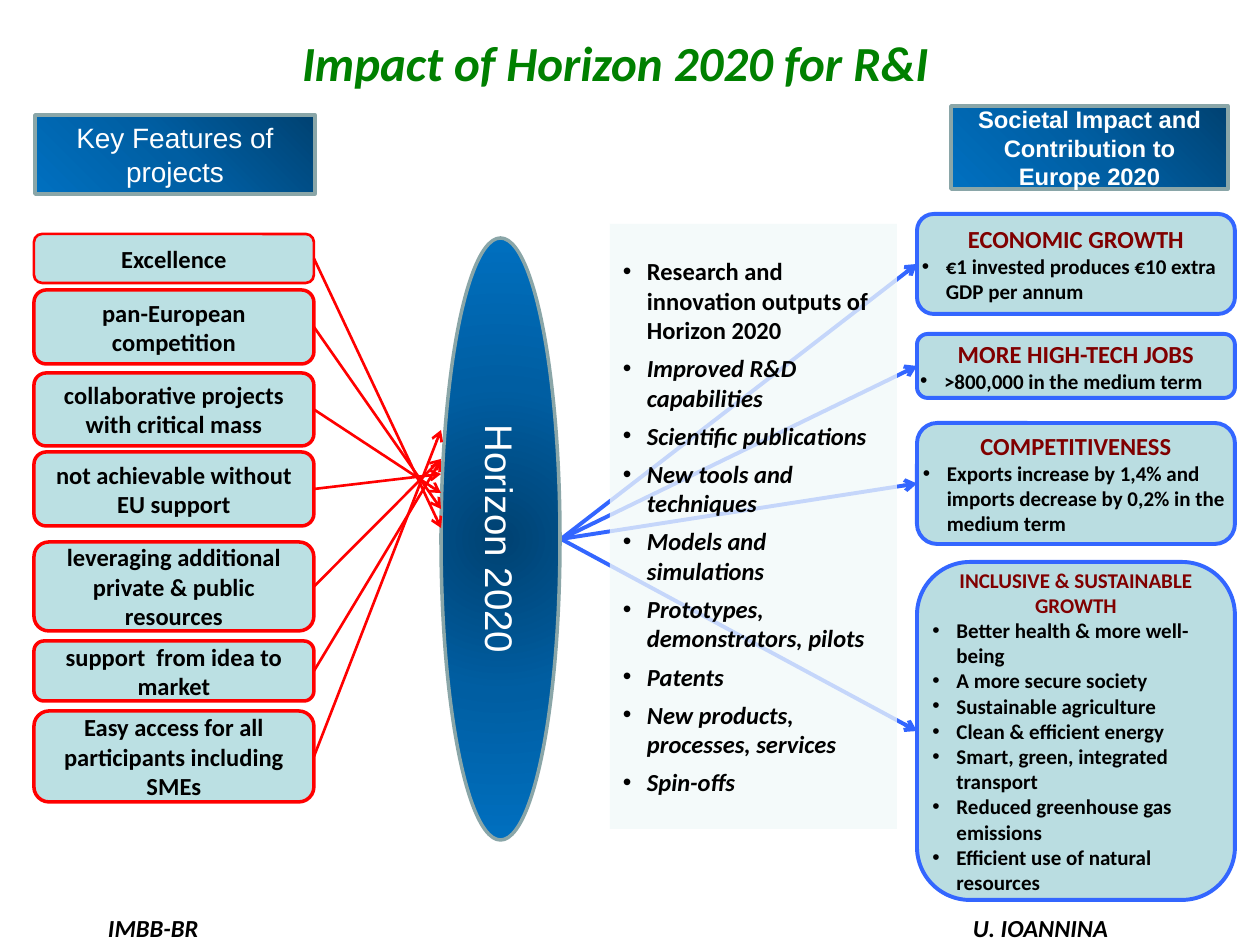
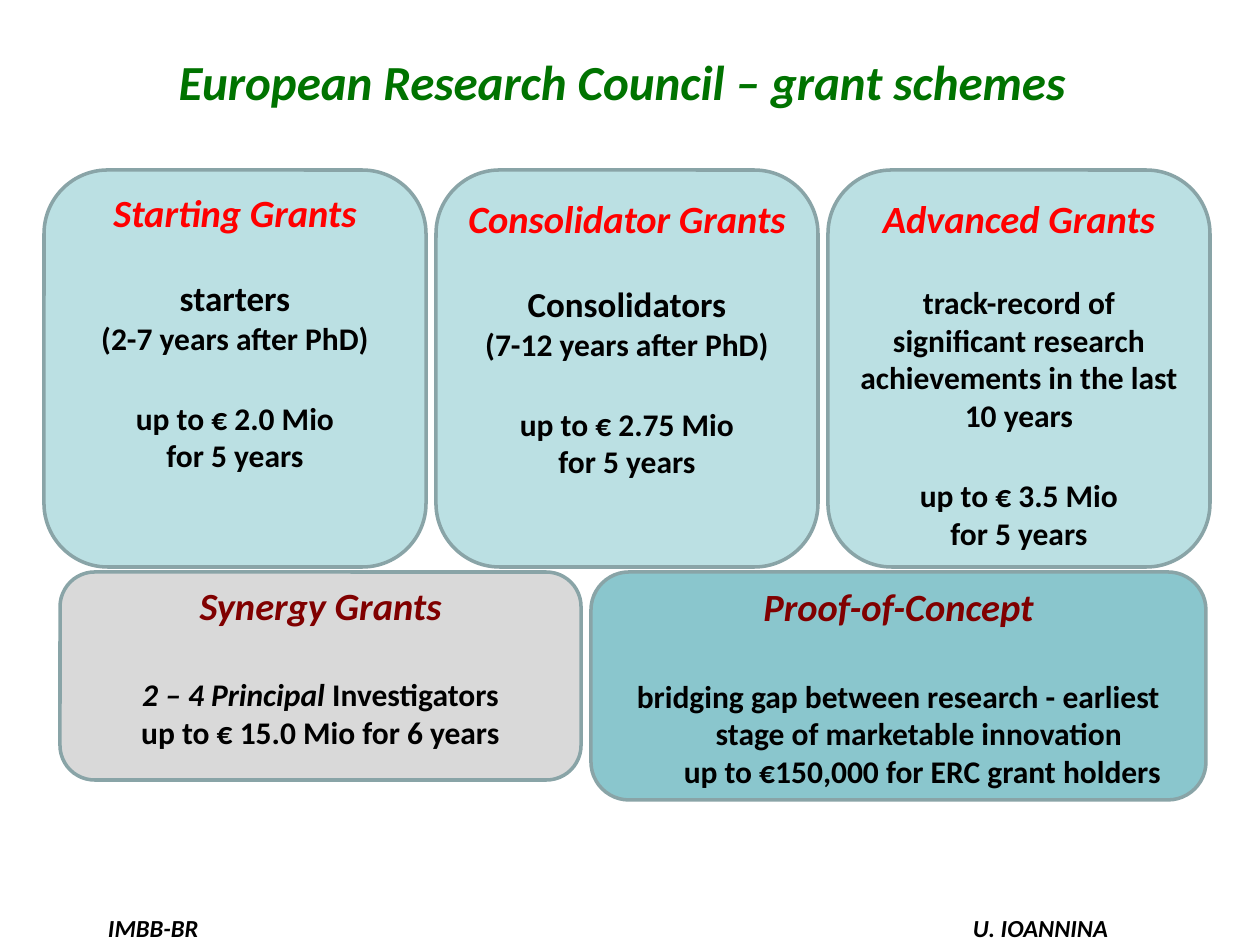
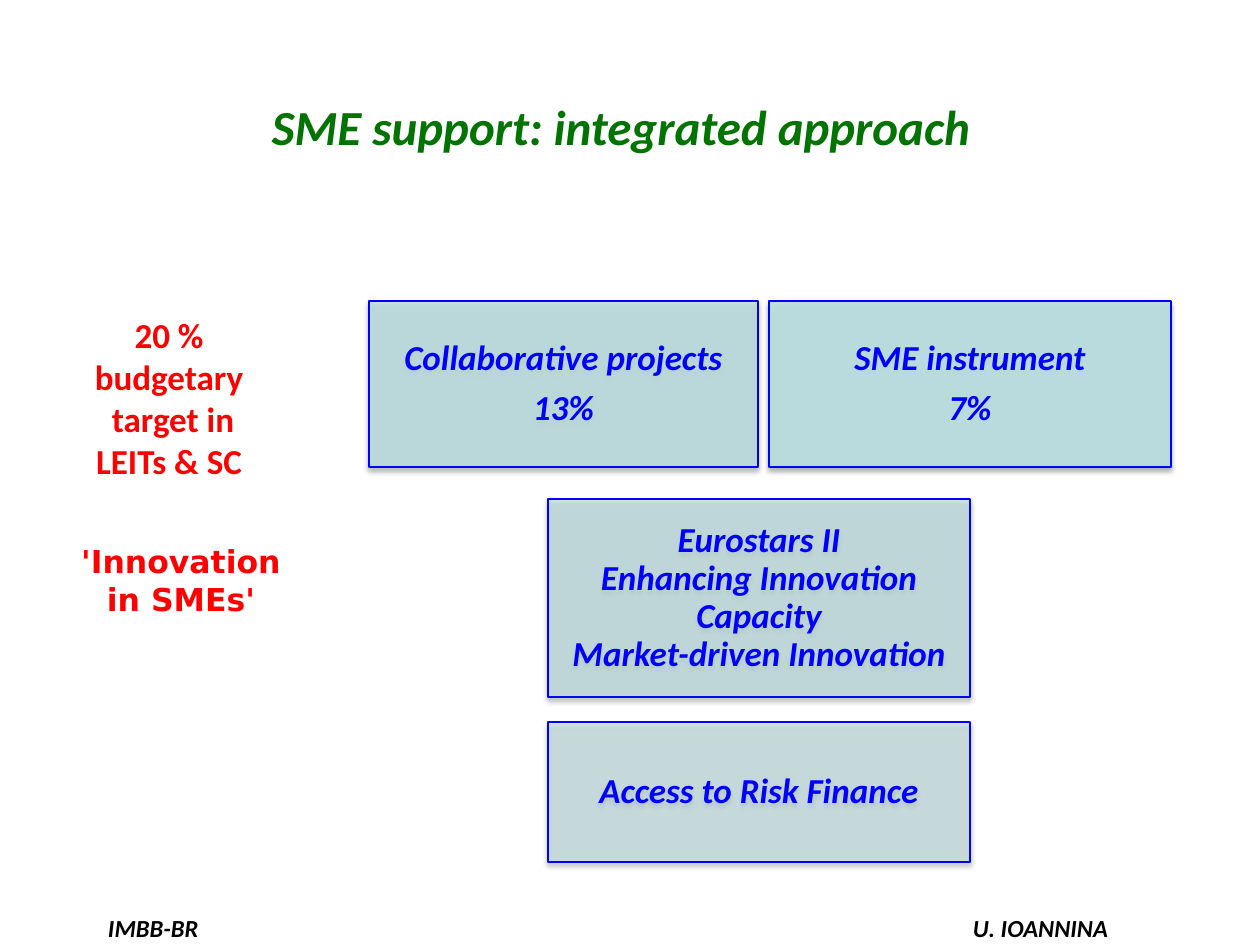
"""Build three slides on Horizon 2020 impact, research grants and SME support."""
import pptx
import pptx.dml.color
import pptx.enum.shapes
import pptx.enum.text
import pptx.oxml
import pptx.oxml.ns
import pptx.util

SHAPE = pptx.enum.shapes.MSO_SHAPE
ALIGN = pptx.enum.text.PP_ALIGN
ANCHOR = pptx.enum.text.MSO_ANCHOR
EMU_PER_PX = 914400 / 126

GREEN, DARK_GREEN = "008000", "007300"
BLACK, WHITE, RED, MAROON, BLUE = "000000", "FFFFFF", "FF0000", "800000", "0000FF"
AQUA, PALE_AQUA, TEAL, GREY = "BBE0E3", "BADDE1", "8AC6CD", "D9D9D9"
ARROW_BLUE, STEEL, CARD_EDGE = "3366FF", "8AA6A8", "89A4A7"
DEEP_BLUES = [(0, "004272"), (50, "005EA2"), (100, "0070C0")]
PADDED, FLUSH, TIGHT = (13, 6), (0, 0), (10, 10)
HANG = 24

FOOTERS = [("U. IOANNINA", (960, 907, 175, 43)), ("IMBB-BR", (95, 907, 130, 43))]

FEATURES = [
    ("Excellence", 234, 49, 1.5, 528),
    ("pan-European competition", 290, 74, 2, 509),
    ("collaborative projects with critical mass", 373, 73, 2, 493),
    ("not achievable without EU support", 452, 74, 2, 474),
    ("leveraging additional private & public resources", 542, 89, 2, 459),
    ("support  from idea to market", 641, 60, 2, 460),
    ("Easy access for all participants including SMEs", 711, 91, 2, 430),
]
OUTPUTS = [
    "Improved R&D capabilities", "Scientific publications", "New tools and techniques",
    "Models and simulations", "Prototypes, demonstrators, pilots", "Patents",
    "New products, processes, services", "Spin-offs",
]
IMPACTS = [
    ("ECONOMIC GROWTH", 14, 214, 100, ["€1 invested produces €10 extra GDP per annum"]),
    ("MORE HIGH-TECH JOBS", 14, 334, 64, [">800,000 in the medium term"]),
    ("COMPETITIVENESS", 14, 423, 121,
     ["Exports increase by 1,4% and imports decrease by 0,2% in the medium term"]),
    ("INCLUSIVE & SUSTAINABLE GROWTH", 12, 562, 338,
     ["Better health & more well-being", "A more secure society", "Sustainable agriculture",
      "Clean & efficient energy", "Smart, green, integrated transport",
      "Reduced greenhouse gas emissions", "Efficient use of natural resources"]),
]

GRANTS = [
    ("Starting Grants", FLUSH,
     [("starters", {"size": 20, "before": 24}), "(2-7 years after PhD)"], "up to € 2.0 Mio"),
    ("Consolidator Grants", PADDED,
     [("Consolidators", {"size": 20, "before": 24}), "(7-12 years after PhD)"],
     "up to € 2.75 Mio"),
    ("Advanced Grants", PADDED,
     [("track-record of significant research achievements in the last 10 years",
       {"before": 24})], "up to € 3.5 Mio"),
]
SYNERGY = [
    ("Synergy Grants", {"size": 22, "color": MAROON, "italic": True}),
    ([("2 – 4 Principal ", {"italic": True}), ("Investigators", {})],
     {"before": 31, "spacing": 0.8}),
    ("up to € 15.0 Mio for 6 years", {"before": 4, "spacing": 0.8}),
]
PROOF = [
    ("Proof-of-Concept", {"size": 22, "color": MAROON, "italic": True}),
    ("bridging gap between research - earliest stage of marketable innovation \n"
     "up to €150,000 for ERC grant holders", {"before": 27, "hang": 48}),
]

SME_BOXES = [
    (["SME instrument", "7%"], (769, 301, 402, 166), 90),
    (["Collaborative projects", "13%"], (369, 301, 389, 166), 77),
    (["Eurostars II\nEnhancing Innovation Capacity\nMarket-driven Innovation"],
     (548, 499, 422, 198), 63),
    (["Access to Risk Finance"], (548, 722, 422, 140), 50),
]
SME_NOTES = [
    (["20 % budgetary", " target in LEITs & SC"], (60, 307, 218, 183), 20, "Calibri"),
    (["'Innovation in SMEs'"], (60, 536, 242, 89), 18, "DejaVu Sans"),
]


def px(length):
    return round(length * EMU_PER_PX)


def rgb(color):
    return pptx.dml.color.RGBColor.from_string(color)


def element(xml):
    return pptx.oxml.parse_xml(xml.replace(">", f' {pptx.oxml.ns.nsdecls("a")}>', 1)
                               if "/>" not in xml.split(">")[0] + ">"
                               else xml.replace("/>", f' {pptx.oxml.ns.nsdecls("a")}/>', 1))


def add_run(paragraph, text, style):
    for number, line in enumerate(text.split("\n")):
        if number:
            paragraph.add_line_break()
        run = paragraph.add_run()
        run.text = line
        font = run.font
        font.name = style.get("face", "Calibri")
        font.size = pptx.util.Pt(style["size"])
        font.bold = style.get("bold", True)
        font.italic = style.get("italic", False)
        font.color.rgb = rgb(style.get("color", BLACK))


def write(shape, paragraphs, anchor=ANCHOR.MIDDLE, margins=PADDED, **base):
    frame = shape.text_frame
    frame.word_wrap = True
    frame.auto_size = pptx.enum.text.MSO_AUTO_SIZE.NONE
    frame.vertical_anchor = anchor
    frame.margin_left = frame.margin_right = px(margins[0])
    frame.margin_top = frame.margin_bottom = px(margins[1])
    for number, entry in enumerate(paragraphs):
        content, own = (entry, {}) if isinstance(entry, str) else entry
        style = {**base, **own}
        paragraph = frame.add_paragraph() if number else frame.paragraphs[0]
        paragraph.alignment = style.get("align", ALIGN.CENTER)
        properties = paragraph._p.get_or_add_pPr()
        if "hang" in style:
            properties.set("marL", str(px(style["hang"])))
            properties.set("indent", str(-px(style["hang"])))
        if style.get("bullet"):
            properties.append(element('<a:buFont typeface="Arial"/>'))
            properties.append(element('<a:buChar char="•"/>'))
        if number:
            paragraph.space_before = pptx.util.Pt(style.get("before", 0))
        paragraph.space_after = pptx.util.Pt(style.get("after", 0))
        paragraph.line_spacing = style.get("spacing", 1.0)
        for text, run_style in [(content, {})] if isinstance(content, str) else content:
            add_run(paragraph, text, {**style, **run_style})


def add_box(slide, kind, place, fill, edge=None, width=2, opacity=100):
    shape = slide.shapes.add_shape(kind, *map(px, place))
    shape.shadow.inherit = False
    shape.fill.solid()
    shape.fill.fore_color.rgb = rgb(fill)
    if opacity < 100:
        color = shape._element.spPr.find(".//" + pptx.oxml.ns.qn("a:srgbClr"))
        color.append(element(f'<a:alpha val="{opacity * 1000}"/>'))
    if edge:
        shape.line.color.rgb = rgb(edge)
        shape.line.width = pptx.util.Pt(width)
    else:
        shape.line.fill.background()
    return shape


def add_glow_box(slide, kind, place, focus):
    shape = add_box(slide, kind, place, DEEP_BLUES[0][1], STEEL)
    stops = "".join(f'<a:gs pos="{position * 1000}"><a:srgbClr val="{color}"/></a:gs>'
                    for position, color in DEEP_BLUES)
    sides = " ".join(f'{side}="{share * 1000}"' for side, share in zip("ltrb", focus))
    gradient = element(f'<a:gradFill rotWithShape="1"><a:gsLst>{stops}</a:gsLst>'
                       f'<a:path path="circle"><a:fillToRect {sides}/></a:path></a:gradFill>')
    properties = shape._element.spPr
    properties.replace(properties.find(pptx.oxml.ns.qn("a:solidFill")), gradient)
    return shape


def add_arrow(slide, start, end, color, width):
    arrow = slide.shapes.add_connector(pptx.enum.shapes.MSO_CONNECTOR.STRAIGHT,
                                       *map(px, start + end))
    arrow.line.color.rgb = rgb(color)
    arrow.line.width = pptx.util.Pt(width)
    properties = arrow._element.spPr
    properties.find(pptx.oxml.ns.qn("a:ln")).append(element('<a:tailEnd type="arrow"/>'))
    properties.append(element("<a:effectLst/>"))
    return arrow


def add_text(slide, place, paragraphs, **style):
    box = slide.shapes.add_textbox(*map(px, place))
    write(box, paragraphs, anchor=ANCHOR.TOP, **style)


def start_slide(deck, title, place, **style):
    slide = deck.slides.add_slide(deck.slide_layouts[5])
    heading = slide.shapes.title
    heading.left, heading.top, heading.width, heading.height = map(px, place)
    write(heading, [title], size=28, italic=True, **style)
    for text, spot in FOOTERS:
        add_text(slide, spot, [text], size=14, italic=True, align=ALIGN.LEFT)
    return slide


def build_impact(deck):
    slide = start_slide(deck, "Impact of Horizon 2020 for R&I", (289, 26, 699, 72),
                        anchor=ANCHOR.TOP, align=ALIGN.LEFT, color=GREEN)
    bullets = {"align": ALIGN.LEFT, "bullet": True, "hang": HANG}

    for name, size, top, height, effects in IMPACTS:
        impact = add_box(slide, SHAPE.ROUNDED_RECTANGLE, (917, top, 318, height),
                         PALE_AQUA, ARROW_BLUE, 2.25)
        write(impact, [(name, {"size": size, "color": MAROON})]
              + [(effect, bullets) for effect in effects], margins=FLUSH, size=12)
        arrow = add_arrow(slide, (561, 539), (917, top + height // 2), ARROW_BLUE, 2.25)
        arrow.end_connect(impact, 1)

    outputs = add_box(slide, SHAPE.RECTANGLE, (610, 224, 287, 605), "F1F9F9", opacity=77)
    write(outputs, ["Research and innovation outputs of Horizon 2020"]
          + [(output, {"italic": True}) for output in OUTPUTS], size=14, after=5, **bullets)

    features_head = add_glow_box(slide, SHAPE.RECTANGLE, (35, 115, 280, 79), (100, 0, 0, 100))
    write(features_head, ["Key Features of", "projects"],
          size=16, face="Arial", bold=False, color=WHITE)
    impact_head = add_glow_box(slide, SHAPE.RECTANGLE, (951, 106, 277, 83), (100, 0, 0, 100))
    write(impact_head, ["Societal Impact and Contribution to Europe 2020"],
          size=13.6, face="Arial", color=WHITE)
    programme = add_glow_box(slide, SHAPE.OVAL, (441, 238, 119, 602), (50, 50, 50, 50))
    write(programme, ["Horizon 2020"], size=22, face="Arial", bold=False, color=WHITE)
    programme.text_frame._txBody.bodyPr.set("vert", "vert")

    for text, top, height, width, target in FEATURES:
        feature = add_box(slide, SHAPE.ROUNDED_RECTANGLE, (34, top, 280, height),
                          AQUA, RED, width)
        write(feature, [text], size=14)
        arrow = add_arrow(slide, (314, top + height // 2), (441, target), RED, 1.5)
        arrow.begin_connect(feature, 3)


def build_grants(deck):
    slide = start_slide(deck, "European Research Council – grant schemes",
                        (60, 45, 1124, 89), anchor=ANCHOR.TOP, color=DARK_GREEN)
    cards = []
    for column, (name, margins, audience, amount) in enumerate(GRANTS):
        paragraphs = [(name, {"size": 22, "color": RED, "italic": True}), *audience,
                      (amount, {"before": 24}), "for 5 years"]
        cards.append(((44 + 392 * column, 170, 382, 397), AQUA, paragraphs, margins))
    cards.append(((60, 572, 521, 208), GREY, SYNERGY, FLUSH))
    cards.append(((591, 572, 615, 228), TEAL, PROOF, FLUSH))
    for place, fill, paragraphs, margins in cards:
        card = add_box(slide, SHAPE.ROUNDED_RECTANGLE, place, fill, CARD_EDGE)
        write(card, paragraphs, anchor=ANCHOR.TOP, margins=margins, size=18)


def build_sme(deck):
    slide = start_slide(deck, "SME support: integrated approach", (54, 76, 1134, 100),
                        color=DARK_GREEN)
    for paragraphs, place, opacity in SME_BOXES:
        box = add_box(slide, SHAPE.RECTANGLE, place, AQUA, BLUE, 0.75, opacity)
        box._element.spPr.find(pptx.oxml.ns.qn("a:effectLst")).append(element(
            '<a:outerShdw blurRad="39370" dist="22860" dir="5400000" rotWithShape="0">'
            '<a:srgbClr val="000000"><a:alpha val="35000"/></a:srgbClr></a:outerShdw>'))
        write(box, paragraphs, margins=TIGHT, size=20, italic=True, color=BLUE,
              spacing=0.9, after=7)
    for paragraphs, place, size, face in SME_NOTES:
        add_text(slide, place, paragraphs, size=size, face=face, color=RED)


def main():
    deck = pptx.Presentation()
    deck.slide_width, deck.slide_height = px(1260), px(945)
    build_impact(deck)
    build_grants(deck)
    build_sme(deck)
    deck.save("out.pptx")


if __name__ == "__main__":
    main()
